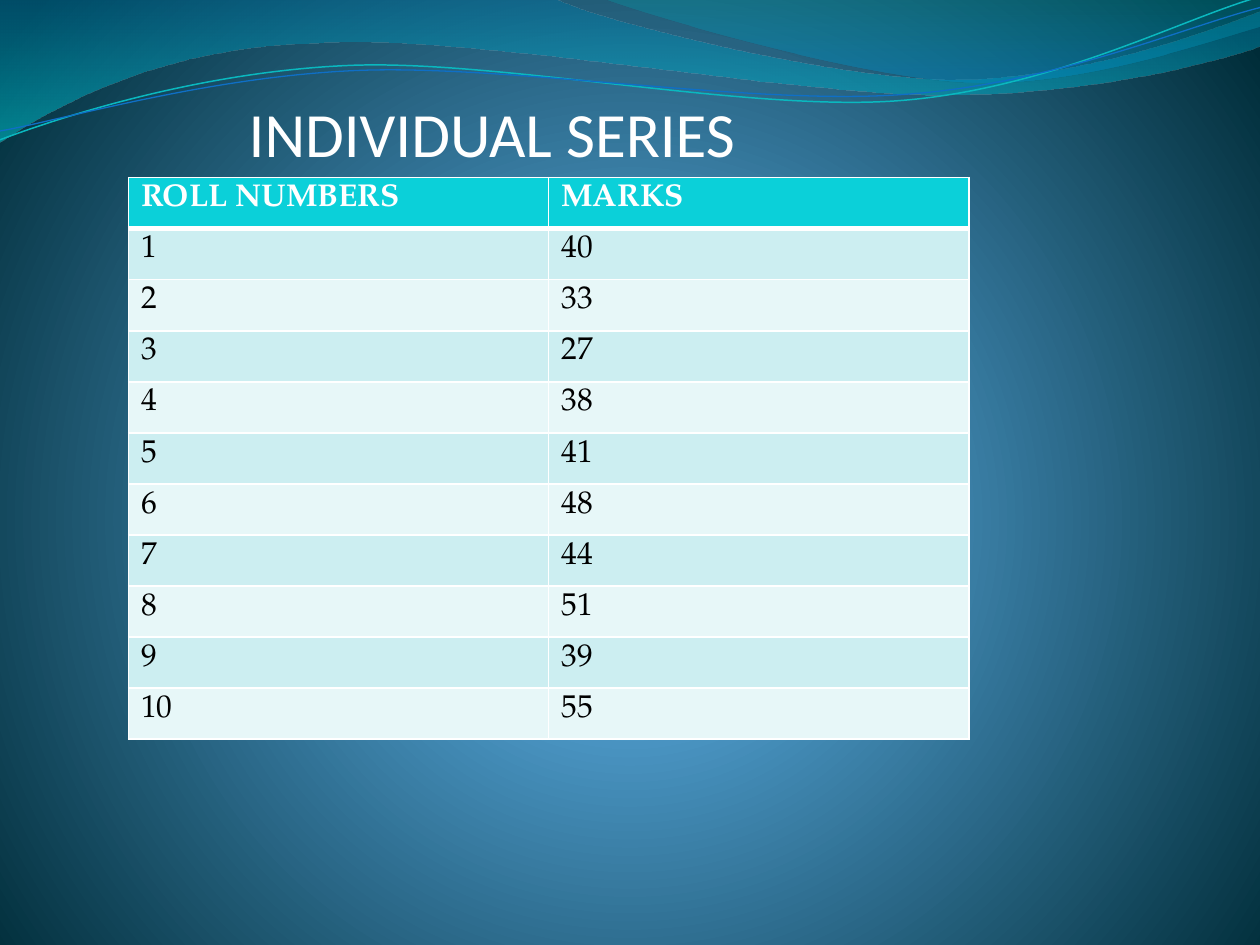
"""Build the individual series slide with its wave header and marks table."""
from dataclasses import dataclass
from typing import Optional

from lxml.etree import SubElement
from pptx import Presentation
from pptx.dml.color import RGBColor as RGB
from pptx.enum.text import MSO_ANCHOR as Anchor, PP_ALIGN as Align
from pptx.oxml.ns import qn
from pptx.util import Inches, Pt


@dataclass(frozen=True)
class Stop:
    pos: int
    color: str
    opacity: int = 100


@dataclass(frozen=True)
class Theme:
    white: str = "FFFFFF"
    black: str = "000000"
    header: str = "0BD0D9"
    bands: tuple = ("CCEEF1", "E7F7F8")
    title_font: str = "Calibri"
    table_font: str = "TeX Gyre Pagella"
    title_size: int = 36
    table_size: int = 18
    backdrop: tuple = (Stop(0, "4AA0D6"), Stop(25, "4C98C7"), Stop(100, "002C38"))
    deep_wave: tuple = (Stop(0, "0074A1", 45), Stop(100, "00C6CF", 55))
    right_wave: tuple = (Stop(0, "00A1A9", 30), Stop(80, "008BBF", 45))
    teal_line: str = "0AB8BF"
    blue_line: str = "0F6FC6"


@dataclass(frozen=True)
class Wave:
    """A path whose steps hold one point for a line or three for a curve."""
    start: tuple
    steps: tuple
    stops: tuple = ()
    line: Optional[str] = None
    width: float = 0


THEME = Theme()
WAVES = (
    Wave((0, 0), (
        ((4.4, -0.01),),
        ((4.76, 0.17), (6.64, 0.63), (7.58, 0.63)),
        ((8.53, 0.63), (9.58, 0.26), (10, 0.09)),
        ((10.01, 0.36),),
        ((9.83, 0.44), (8.7, 0.76), (7.46, 0.75)),
        ((6.22, 0.75), (3.82, 0.28), (2.57, 0.34)),
        ((1.29, 0.36), (0.46, 0.83), (-0.01, 1.13)),
    ), stops=THEME.deep_wave),
    Wave((4.79, -0.01), (
        ((5.09, 0.11), (6.82, 0.62), (7.69, 0.65)),
        ((8.56, 0.69), (9.61, 0.32), (10, 0.21)),
        ((10, 0),),
    ), stops=THEME.right_wave),
    Wave((0, 1.11), (
        ((0.48, 0.93), (1.58, 0.57), (2.77, 0.52)),
        ((3.95, 0.47), (5.93, 0.89), (7.13, 0.8)),
        ((8.33, 0.71), (9.38, 0.15), (9.98, -0.02)),
    ), line=THEME.teal_line, width=0.85),
    Wave((0, 1.04), (
        ((0.47, 0.96), (1.64, 0.61), (2.83, 0.56)),
        ((4.03, 0.51), (5.97, 0.84), (7.17, 0.75)),
        ((8.36, 0.67), (9.41, 0.21), (10, 0.06)),
    ), line=THEME.blue_line, width=0.75),
)
HEADINGS = ("ROLL NUMBERS", "MARKS")
MARKS = (40, 33, 27, 38, 41, 48, 44, 51, 39, 55)


def set_gradient(fill, owner, stops: tuple, radial: bool = False) -> None:
    """Give a fill gradient stops, running downwards or out from a centre."""
    fill.gradient()
    grad = owner.find(".//" + qn("a:gradFill"))
    for child in list(grad):
        grad.remove(child)
    gs_lst = SubElement(grad, qn("a:gsLst"))
    for stop in stops:
        gs = SubElement(gs_lst, qn("a:gs"), pos=str(stop.pos * 1000))
        clr = SubElement(gs, qn("a:srgbClr"), val=stop.color)
        if stop.opacity < 100:
            SubElement(clr, qn("a:alpha"), val=str(stop.opacity * 1000))
    if radial:
        circle = SubElement(grad, qn("a:path"), path="circle")
        SubElement(circle, qn("a:fillToRect"), l="10000", t="110000", r="10000", b="100000")
    else:
        SubElement(grad, qn("a:lin"), ang="5400000", scaled="0")


def bend_segments(sp, steps: tuple) -> None:
    """Join each three-point step of a freeform into one cubic curve."""
    segments = iter(sp._element.findall(".//" + qn("a:lnTo")))
    for step in steps:
        first, *others = [next(segments) for _ in step]
        if others:
            outline = first.getparent()
            curve = SubElement(outline, qn("a:cubicBezTo"))
            outline.replace(first, curve)
            curve.append(first[0])
            for segment in others:
                curve.append(segment[0])
                outline.remove(segment)


def add_wave(s, wave: Wave) -> None:
    """Draw a wave as a gradient area or an open line."""
    points = [(Inches(x), Inches(y)) for step in wave.steps for x, y in step]
    builder = s.shapes.build_freeform(*map(Inches, wave.start))
    builder.add_line_segments(points, close=bool(wave.stops))
    sp = builder.convert_to_shape()
    bend_segments(sp, wave.steps)
    sp.shadow.inherit = False
    if wave.stops:
        set_gradient(sp.fill, sp._element, wave.stops)
        sp.line.fill.background()
    else:
        sp.fill.background()
        sp.line.color.rgb = RGB.from_string(wave.line)
        sp.line.width = Pt(wave.width)


def add_run(p, text: str, font: str, size: int, color: str, bold: bool = False) -> None:
    """Add one formatted run to a paragraph."""
    r = p.add_run()
    r.text = text
    r.font.name, r.font.size, r.font.bold = font, Pt(size), bold
    r.font.color.rgb = RGB.from_string(color)


def set_borders(cell, bottom: int) -> None:
    """Put white borders round a cell, with a chosen bottom width."""
    tc_pr = cell._tc.get_or_add_tcPr()
    for i, (side, width) in enumerate(zip("LRTB", (1, 1, 1, bottom))):
        ln = SubElement(tc_pr, qn(f"a:ln{side}"), w=str(Pt(width)))
        SubElement(SubElement(ln, qn("a:solidFill")), qn("a:srgbClr"), val=THEME.white)
        tc_pr.insert(i, ln)


def add_marks_table(s) -> None:
    """Add the table of roll numbers and marks."""
    rows = [HEADINGS, *((str(n), str(mark)) for n, mark in enumerate(MARKS, 1))]
    table = s.shapes.add_table(len(rows), len(HEADINGS), Inches(1.02), Inches(1.41),
                               Inches(6.67), Inches(4.46)).table
    for i, values in enumerate(rows):
        is_header = i == 0
        fill = THEME.header if is_header else THEME.bands[(i - 1) % 2]
        color = THEME.white if is_header else THEME.black
        for j, text in enumerate(values):
            cell = table.cell(i, j)
            cell.fill.solid()
            cell.fill.fore_color.rgb = RGB.from_string(fill)
            set_borders(cell, 3 if is_header else 1)
            add_run(cell.text_frame.paragraphs[0], text, THEME.table_font,
                    THEME.table_size, color, is_header)


def add_title(s, text: str) -> None:
    """Place and format the title in front of the waves."""
    sp = s.shapes.title
    sp.left, sp.top, sp.width, sp.height = map(Inches, (1.09, 0.7, 5.63, 0.71))
    tf = sp.text_frame
    tf.word_wrap = True
    tf.vertical_anchor = Anchor.TOP
    p = tf.paragraphs[0]
    p.alignment = Align.CENTER
    add_run(p, text, THEME.title_font, THEME.title_size, THEME.white)
    s.shapes._spTree.append(sp._element)


def main() -> None:
    """Build and save the slide."""
    prs = Presentation()
    prs.slide_width, prs.slide_height = Inches(10), Inches(7.5)
    s = prs.slides.add_slide(prs.slide_layouts[5])
    set_gradient(s.background.fill, s._element, THEME.backdrop, radial=True)
    for wave in WAVES:
        add_wave(s, wave)
    add_marks_table(s)
    add_title(s, "INDIVIDUAL SERIES")
    prs.save("out.pptx")


if __name__ == "__main__":
    main()
